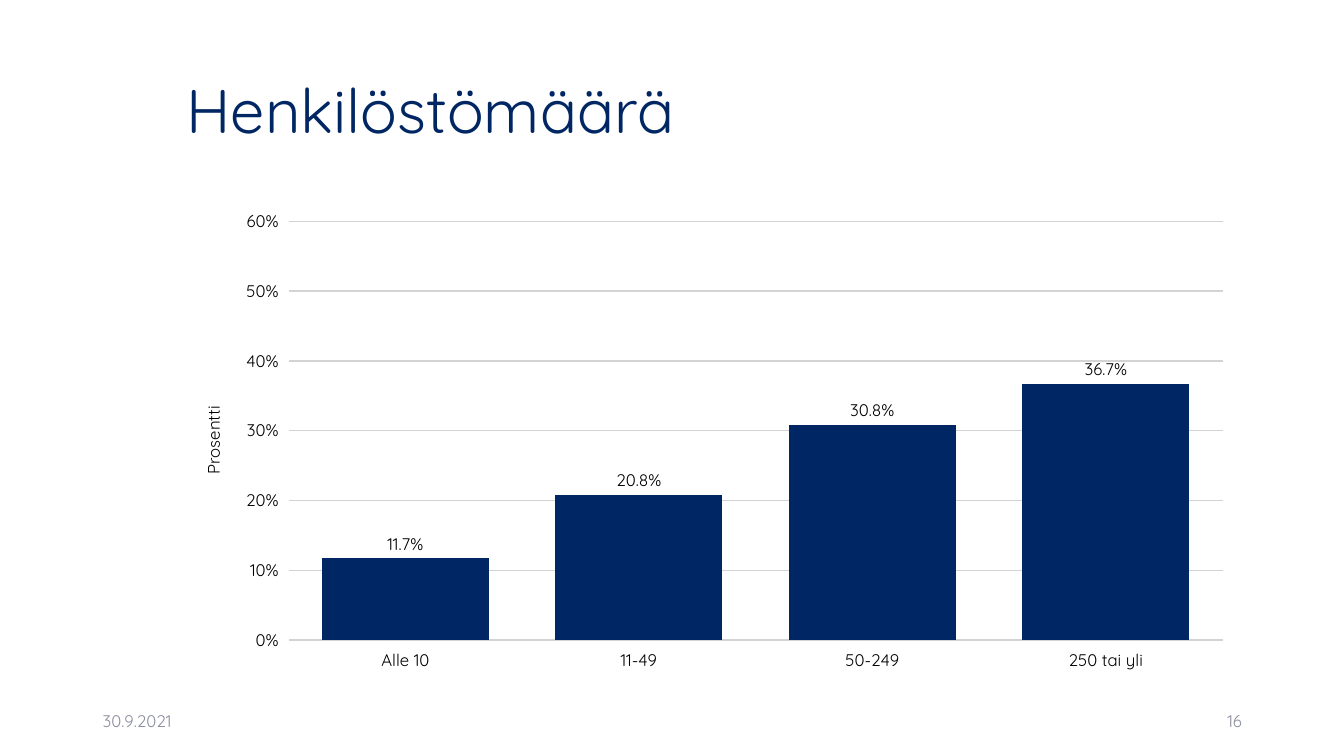
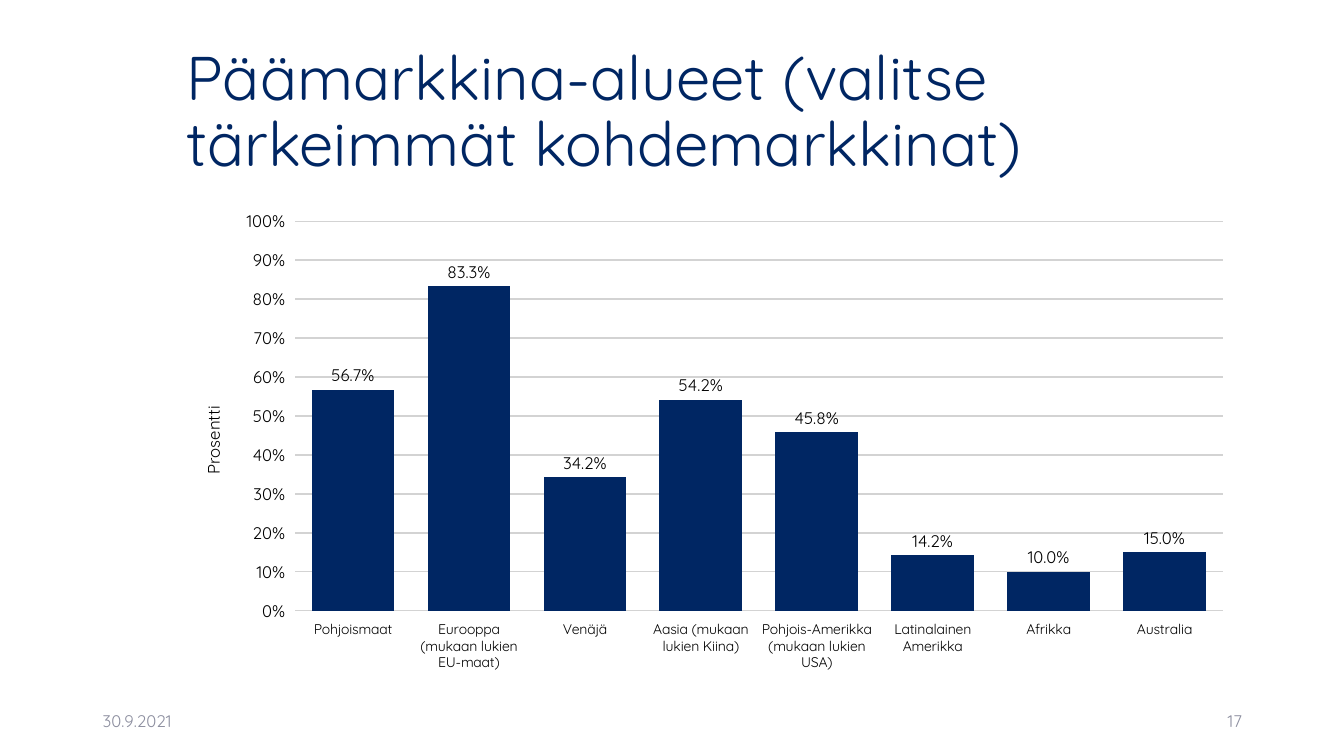
from dataclasses import dataclass

from lxml import etree
from pptx import Presentation
from pptx.chart.chart import Chart
from pptx.chart.data import CategoryChartData
from pptx.dml.color import RGBColor
from pptx.enum.chart import XL_CHART_TYPE, XL_LABEL_POSITION, XL_TICK_MARK
from pptx.enum.text import MSO_ANCHOR, PP_ALIGN
from pptx.oxml.ns import qn
from pptx.slide import Slide
from pptx.util import Cm, Pt

NAVY = RGBColor(0x00, 0x26, 0x63)
FOOTER_GREY = RGBColor(0x8C, 0x8E, 0x9F)
GRID_GREY = RGBColor(0xD3, 0xD3, 0xD3)
BLACK = RGBColor(0x00, 0x00, 0x00)

COLUMNS = XL_CHART_TYPE.COLUMN_CLUSTERED
OUTSIDE_END = XL_LABEL_POSITION.OUTSIDE_END
TICK_OUT = XL_TICK_MARK.OUTSIDE
MIDDLE = MSO_ANCHOR.MIDDLE
LEFT, RIGHT = PP_ALIGN.LEFT, PP_ALIGN.RIGHT

FONT = "Quicksand"
DATE = "30.9.2021"
FIRST_PAGE = 16
BLANK_LAYOUT = 6


@dataclass(frozen=True)
class Box:
    left: float
    top: float
    width: float
    height: float

    def lengths(self) -> tuple[Cm, Cm, Cm, Cm]:
        return Cm(self.left), Cm(self.top), Cm(self.width), Cm(self.height)


@dataclass(frozen=True)
class TextStyle:
    size: int
    color: RGBColor
    align: PP_ALIGN = LEFT
    line_spacing: float = 1.0


@dataclass(frozen=True)
class Survey:
    title: str
    shares: dict[str, float]
    axis_max: float
    category_size: int
    plot: dict[str, float]  # inner plot area as fractions of the chart


TITLE_BOX = Box(4.45, 1.02, 26.9, 3.68)
CHART_BOX = Box(4.45, 5.08, 26.9, 12.09)
DATE_BOX = Box(2.34, 17.65, 7.62, 1.02)
PAGE_BOX = Box(23.93, 17.65, 7.62, 1.02)

TITLE_STYLE = TextStyle(44, NAVY, line_spacing=0.9)
DATE_STYLE = TextStyle(12, FOOTER_GREY)
PAGE_STYLE = TextStyle(12, FOOTER_GREY, RIGHT)

AXIS_TITLE_PLACE = {"x": 0.02, "y": 0.42}

SURVEYS = [
    Survey(
        "Henkilöstömäärä",
        {"Alle 10": 0.117, "11-49": 0.208, "50-249": 0.308, "250 tai yli": 0.367},
        axis_max=0.6,
        category_size=12,
        plot={"x": 0.105, "y": 0.041, "w": 0.875, "h": 0.873},
    ),
    Survey(
        "Päämarkkina-alueet (valitse tärkeimmät kohdemarkkinat)",
        {
            "Pohjoismaat": 0.567,
            "Eurooppa (mukaan lukien EU-maat)": 0.833,
            "Venäjä": 0.342,
            "Aasia (mukaan lukien Kiina)": 0.542,
            "Pohjois-Amerikka (mukaan lukien USA)": 0.458,
            "Latinalainen Amerikka": 0.142,
            "Afrikka": 0.1,
            "Australia": 0.15,
        },
        axis_max=1,
        category_size=10,
        plot={"x": 0.111, "y": 0.041, "w": 0.869, "h": 0.812},
    ),
]


def add_text(slide: Slide, box: Box, text: str, style: TextStyle) -> None:
    tf = slide.shapes.add_textbox(*box.lengths()).text_frame
    tf.word_wrap = True
    tf.vertical_anchor = MIDDLE
    p = tf.paragraphs[0]
    p.text = text
    p.alignment = style.align
    p.line_spacing = style.line_spacing
    p.font.name = FONT
    p.font.size = Pt(style.size)
    p.font.color.rgb = style.color


def set_layout(parent: etree.ElementBase, index: int, place: dict[str, float]) -> None:
    """Fix the place of a chart part, given as fractions of the chart."""
    for old in parent.findall(qn("c:layout")):
        parent.remove(old)
    layout = etree.Element(qn("c:layout"))
    parent.insert(index, layout)
    manual = etree.SubElement(layout, qn("c:manualLayout"))
    if "w" in place:
        etree.SubElement(manual, qn("c:layoutTarget"), val="inner")
    for key in ("x", "y"):
        etree.SubElement(manual, qn(f"c:{key}Mode"), val="edge")
    for key, fraction in place.items():
        etree.SubElement(manual, qn(f"c:{key}"), val=str(fraction))


def style_axes(chart: Chart, survey: Survey) -> None:
    for axis in (chart.category_axis, chart.value_axis):
        axis.major_tick_mark = TICK_OUT
        axis.format.line.fill.background()
    chart.category_axis.tick_labels.font.size = Pt(survey.category_size)

    axis = chart.value_axis
    axis.minimum_scale, axis.maximum_scale = 0, survey.axis_max
    axis.major_unit = 0.1
    axis.tick_labels.number_format = "0%"
    axis.tick_labels.number_format_is_linked = False
    grid = axis.major_gridlines.format.line
    grid.color.rgb = GRID_GREY
    grid.width = Pt(1)

    p = axis.axis_title.text_frame.paragraphs[0]
    p.text = "Prosentti"
    p.font.name = FONT
    p.font.size = Pt(12)
    p.font.bold = False
    p.font.color.rgb = BLACK
    set_layout(axis.axis_title._element, 1, AXIS_TITLE_PLACE)


def add_column_chart(slide: Slide, survey: Survey) -> None:
    data = CategoryChartData(number_format="0.0%")
    data.categories = list(survey.shares)
    data.add_series("Series 1", list(survey.shares.values()))
    chart = slide.shapes.add_chart(COLUMNS, *CHART_BOX.lengths(), data).chart
    chart.has_legend = False
    chart.has_title = False
    chart.font.name = FONT
    chart.font.size = Pt(12)
    chart.font.color.rgb = BLACK

    plot = chart.plots[0]
    plot.gap_width = 40
    plot.vary_by_categories = False
    fill = plot.series[0].format.fill
    fill.solid()
    fill.fore_color.rgb = NAVY
    plot.has_data_labels = True
    labels = plot.data_labels
    labels.show_value = True
    labels.position = OUTSIDE_END
    labels.number_format = "0.0%"
    labels.number_format_is_linked = False

    style_axes(chart, survey)
    set_layout(chart._chartSpace.chart.plotArea, 0, survey.plot)


def main() -> None:
    prs = Presentation()
    prs.slide_width, prs.slide_height = Cm(33.87), Cm(19.05)
    for page, survey in enumerate(SURVEYS, FIRST_PAGE):
        slide = prs.slides.add_slide(prs.slide_layouts[BLANK_LAYOUT])
        add_text(slide, TITLE_BOX, survey.title, TITLE_STYLE)
        add_text(slide, DATE_BOX, DATE, DATE_STYLE)
        add_text(slide, PAGE_BOX, str(page), PAGE_STYLE)
        add_column_chart(slide, survey)
    prs.save("out.pptx")


if __name__ == "__main__":
    main()
